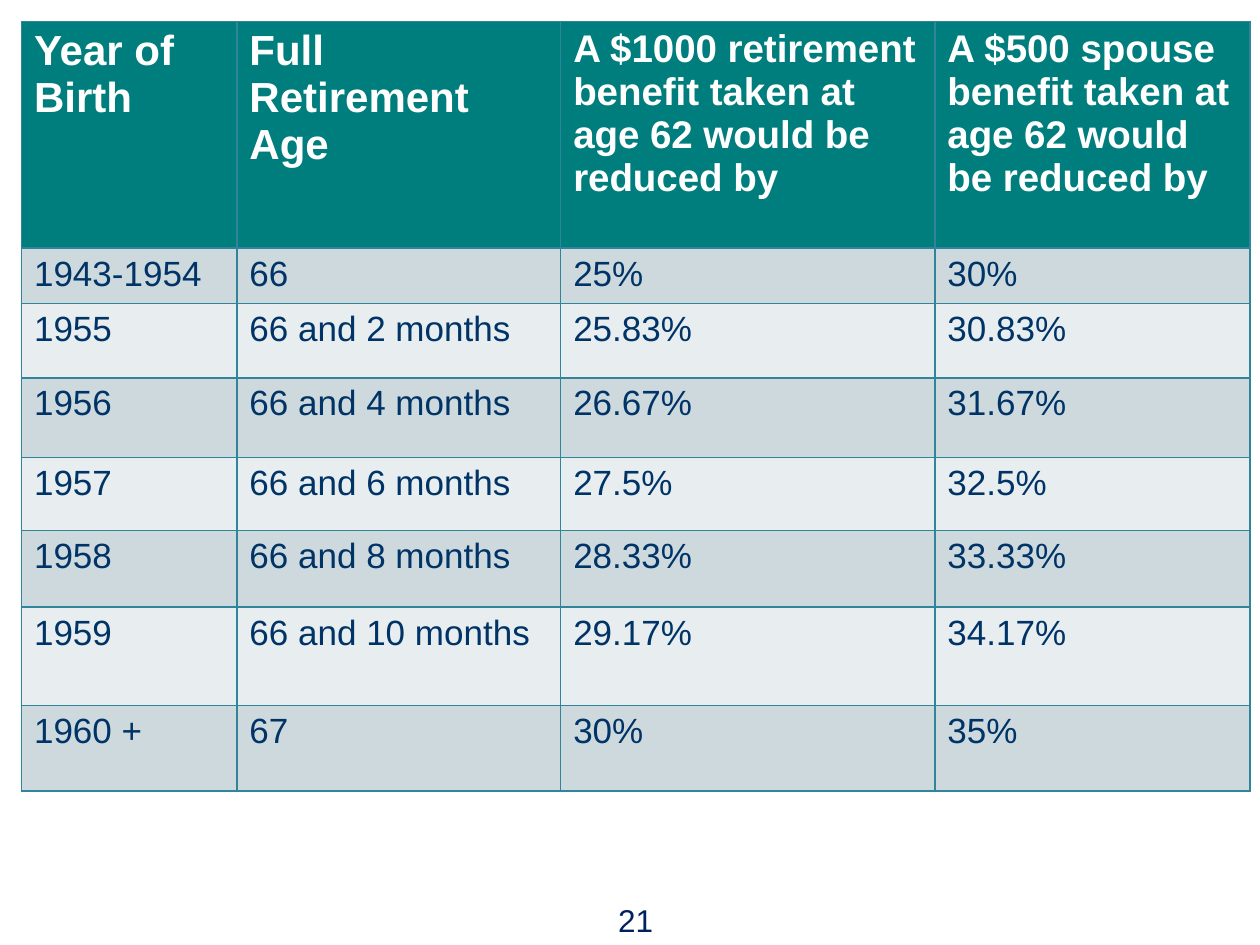
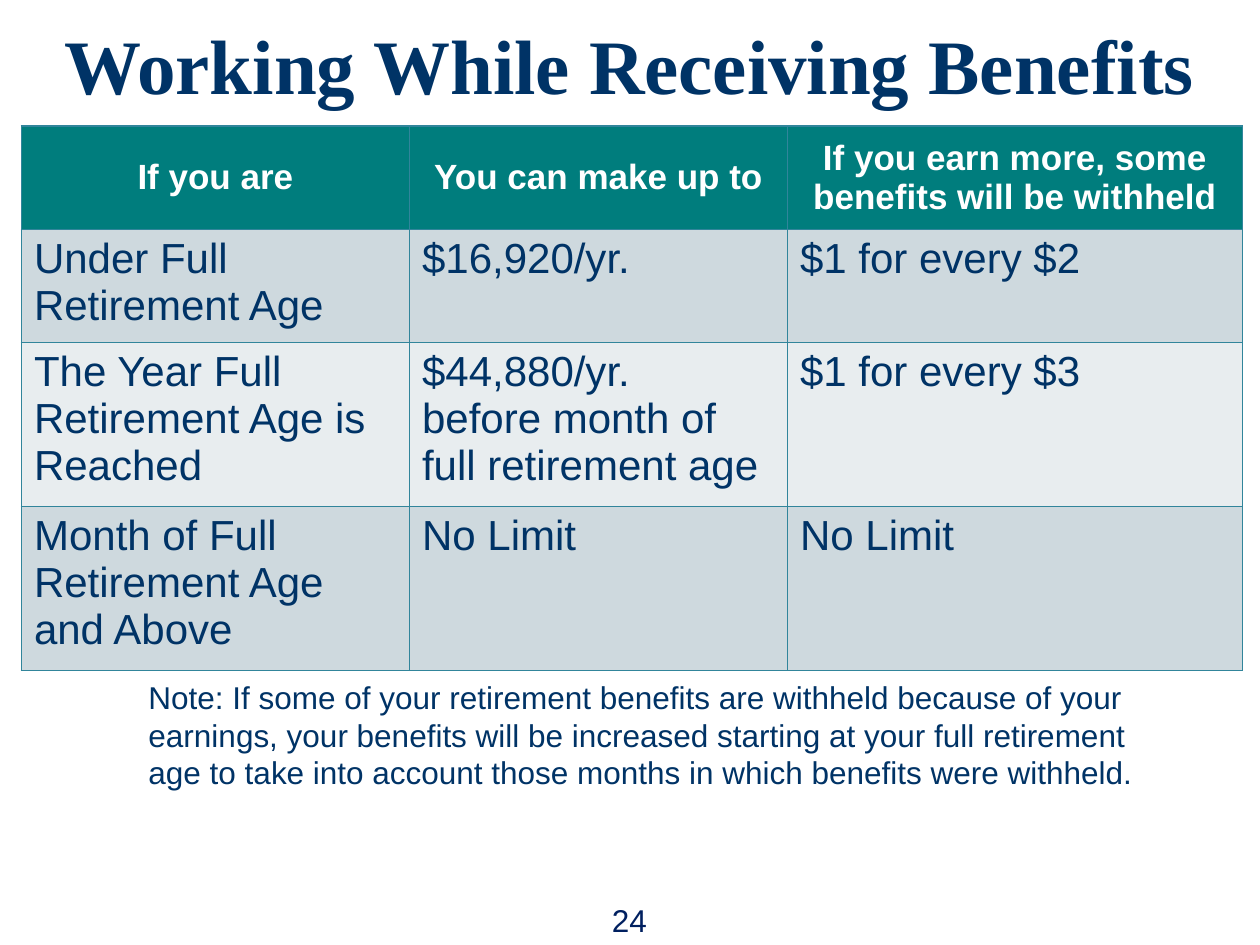
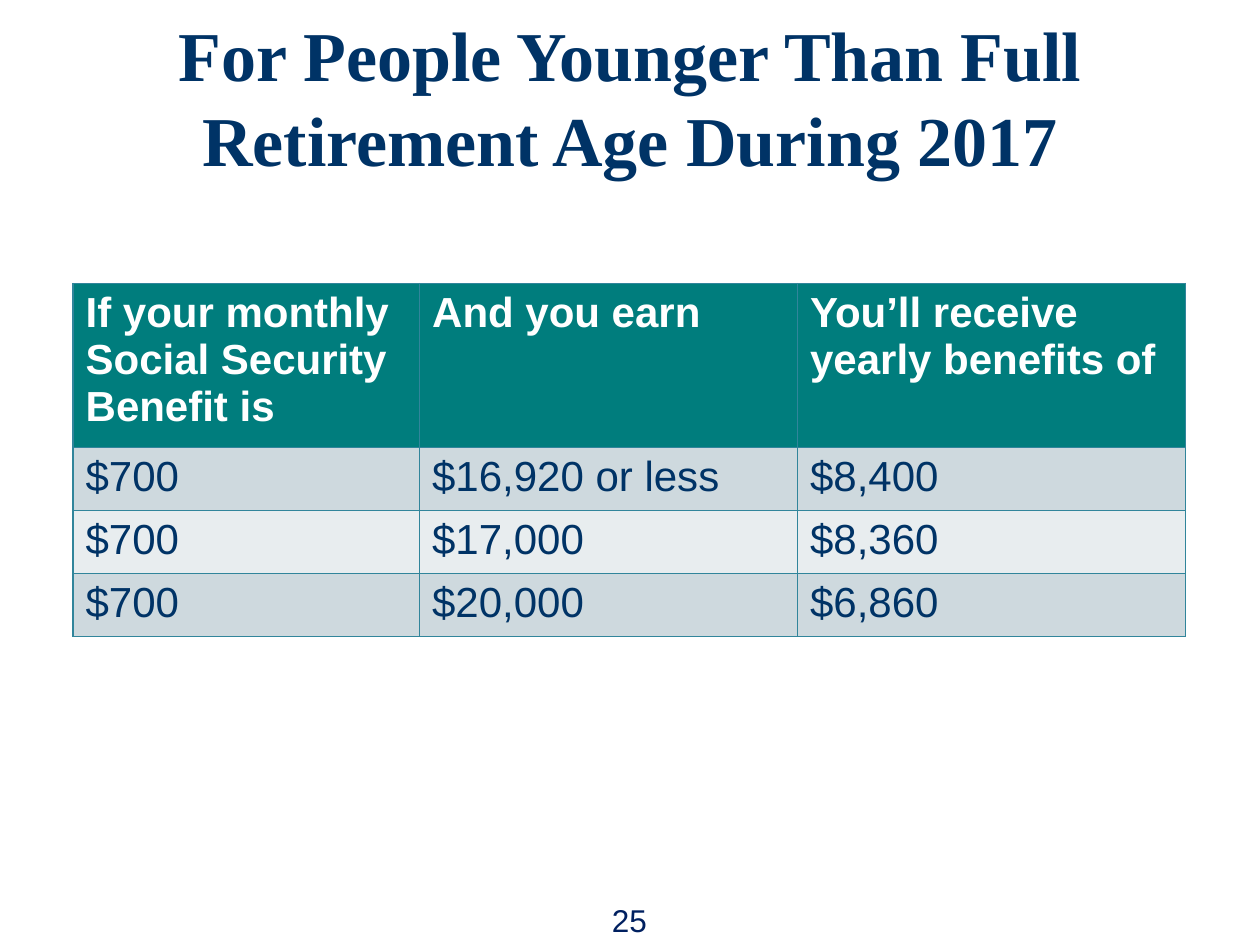
from pptx import Presentation
from pptx.dml.color import RGBColor as RGB
from pptx.enum.text import MSO_ANCHOR as Anchor, MSO_AUTO_SIZE as Fit, PP_ALIGN as Align
from pptx.oxml.ns import qn
from pptx.util import Inches, Pt
from lxml.etree import SubElement as sub

SANS, SERIF = "Arial", "Times New Roman"
NAVY, DEEP, TEAL, EDGE = "003366", "002060", "007D7D", "31859B"
WHITE, BANDS = "FFFFFF", ("CED9DE", "E8EDEF")
TITLE, BLANK = 5, 6


def tint(code):
    return RGB.from_string(code)


class Deck:
    def __init__(self):
        self.prs = Presentation()
        self.prs.slide_width, self.prs.slide_height = Inches(10), Inches(7.5)
        self.slide = None

    def start(self, kind):
        self.slide = self.prs.slides.add_slide(self.prs.slide_layouts[kind])

    def style(self, frame, text, size, color, face=SANS, bold=False, align=Align.LEFT):
        frame.text = text
        for para in frame.paragraphs:
            para.alignment = align
            for run in para.runs:
                font = run.font
                font.name, font.size, font.bold = face, Pt(size), bold
                font.color.rgb = tint(color)

    def title(self, text, top, tall, size):
        self.start(TITLE)
        box = self.slide.shapes.title
        box.left, box.top = Inches(0), Inches(top)
        box.width, box.height = Inches(10), Inches(tall)
        frame = box.text_frame
        frame.auto_size, frame.vertical_anchor = Fit.NONE, Anchor.TOP
        self.style(frame, text, size, NAVY, SERIF, True, Align.CENTER)
        frame.paragraphs[0].line_spacing = Pt(size * 1.22)

    def text(self, words, spot, color, align=Align.LEFT, anchor=Anchor.TOP):
        frame = self.slide.shapes.add_textbox(*map(Inches, spot)).text_frame
        frame.word_wrap, frame.vertical_anchor = True, anchor
        self.style(frame, words, 18, color, align=align)

    def number(self, value, left=3.83):
        self.text(str(value), (left, 7.1, 2.33, 0.4), DEEP, Align.CENTER, Anchor.MIDDLE)

    def border(self, cell):
        props = cell._tc.get_or_add_tcPr()
        for side in ("lnL", "lnR", "lnT", "lnB"):
            line = sub(props, qn(f"a:{side}"), w=str(Pt(1)))
            sub(sub(line, qn("a:solidFill")), qn("a:srgbClr"), val=EDGE)

    def table(self, left, top, cols, rows, data, heads, size, mid=False):
        spot = map(Inches, (left, top, sum(cols), sum(rows)))
        grid = self.slide.shapes.add_table(len(rows), len(cols), *spot).table
        for col, wide in zip(grid.columns, cols):
            col.width = Inches(wide)
        for r, (tall, line) in enumerate(zip(rows, data)):
            grid.rows[r].height = Inches(tall)
            for c, words in enumerate(line):
                cell = grid.cell(r, c)
                self.border(cell)
                cell.fill.solid()
                cell.fill.fore_color.rgb = tint(BANDS[(r - 1) % 2] if r else TEAL)
                if r:
                    self.style(cell.text_frame, words, size, NAVY)
                else:
                    cell.vertical_anchor = Anchor.MIDDLE if mid else Anchor.TOP
                    self.style(cell.text_frame, words, heads[c], WHITE, bold=True,
                               align=Align.CENTER if mid else Align.LEFT)


def main():
    deck = Deck()

    deck.start(BLANK)
    deck.table(0.17, 0.17, (1.71, 2.57, 2.97, 2.5),
               (1.8, 0.44, 0.59, 0.63, 0.58, 0.61, 0.78, 0.68), (
        ("Year of Birth", "Full\nRetirement\nAge",
         "A $1000 retirement benefit taken at age 62 would be reduced by",
         "A $500 spouse benefit taken at age 62 would be reduced by"),
        ("1943-1954", "66", "25%", "30%"),
        ("1955", "66 and 2 months", "25.83%", "30.83%"),
        ("1956", "66 and 4 months", "26.67%", "31.67%"),
        ("1957", "66 and 6 months", "27.5%", "32.5%"),
        ("1958", "66 and 8 months", "28.33%", "33.33%"),
        ("1959", "66 and 10 months", "29.17%", "34.17%"),
        ("1960 +", "67", "30%", "35%"),
    ), (24, 24, 22, 22), 20)
    deck.number(21, 3.88)

    deck.title("Working While Receiving Benefits", 0.08, 0.84, 44)
    deck.table(0.17, 1, (3.08, 3, 3.61), (0.82, 0.9, 1.3, 1.3), (
        ("If you are", "You can make up to",
         "If you earn more, some benefits will be withheld"),
        ("Under Full Retirement Age", "$16,920/yr.", "$1 for every $2"),
        ("The Year Full Retirement Age is Reached",
         "$44,880/yr.\vbefore month of full retirement age", "$1 for every $3"),
        ("Month of Full Retirement Age\vand Above", "No Limit", "No Limit"),
    ), (20, 20, 20), 24, mid=True)
    deck.text("Note: If some of your retirement benefits are withheld because of your "
              "earnings, your benefits will be increased starting at your full retirement "
              "age to take into account those months in which benefits were withheld.",
              (1.08, 5.33, 8.05, 1.01), NAVY)
    deck.number(24)

    deck.title("For People Younger Than Full Retirement Age During 2017", 0.03, 1.45, 40)
    deck.table(0.58, 2.25, (2.75, 3, 3.08), (1.3, 0.5, 0.5, 0.5), (
        ("If your monthly Social Security Benefit is", "And you earn",
         "You’ll receive yearly benefits of"),
        ("$700", "$16,920 or less", "$8,400"),
        ("$700", "$17,000", "$8,360"),
        ("$700", "$20,000", "$6,860"),
    ), (24, 24, 24), 24)
    deck.number(25)

    deck.prs.save("out.pptx")


if __name__ == "__main__":
    main()
